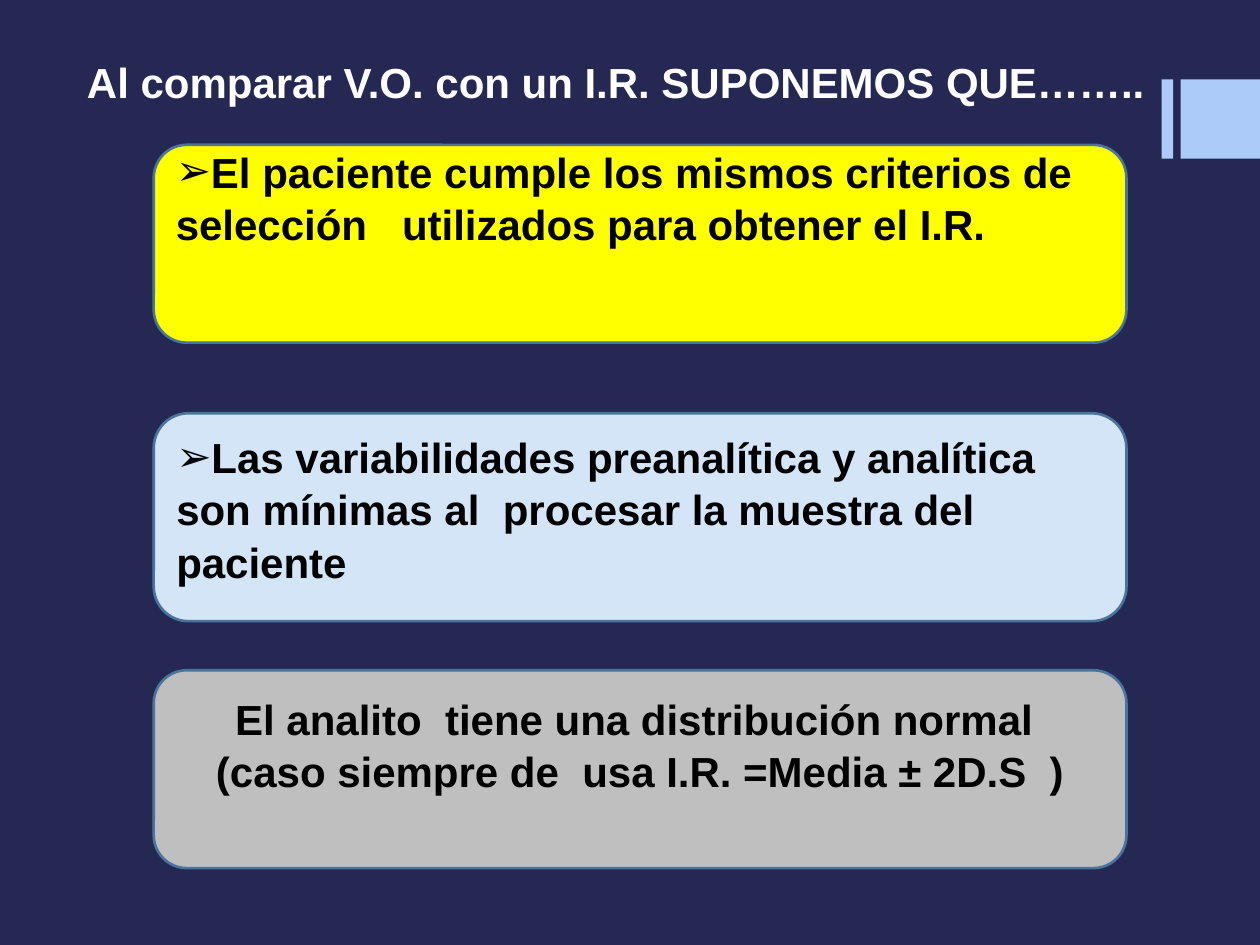
from dataclasses import dataclass

from lxml import etree
from pptx import Presentation
from pptx.dml.color import RGBColor
from pptx.enum.shapes import MSO_SHAPE
from pptx.enum.text import MSO_ANCHOR, PP_ALIGN
from pptx.oxml.ns import qn
from pptx.util import Inches, Pt

RECT = MSO_SHAPE.RECTANGLE
ROUND = MSO_SHAPE.ROUNDED_RECTANGLE
TOP = MSO_ANCHOR.TOP
MIDDLE = MSO_ANCHOR.MIDDLE
LEFT = PP_ALIGN.LEFT
CENTER = PP_ALIGN.CENTER


@dataclass(frozen=True)
class Theme:
    font: str = "Arial"
    size: int = 24
    edge: float = 1.5
    space: float = 1.04
    back: str = "242852"
    accent: str = "ACCBF9"
    line: str = "49749B"
    light: str = "FFFFFF"
    dark: str = "000000"
    yellow: str = "FFFF00"
    blue: str = "D4E5F7"
    gray: str = "BFBFBF"


class Board:
    def __init__(self, theme, slide):
        self.theme = theme
        self.slide = slide
        fill = slide.background.fill
        fill.solid()
        fill.fore_color.rgb = RGBColor.from_string(theme.back)

    def style(self, para, color, align):
        para.alignment = align
        font = para.font
        font.name = self.theme.font
        font.size = Pt(self.theme.size)
        font.bold = True
        font.color.rgb = RGBColor.from_string(color)

    def title(self, text, left, top, width, height):
        shape = self.slide.shapes.title
        shape.left, shape.top = Inches(left), Inches(top)
        shape.width, shape.height = Inches(width), Inches(height)
        frame = shape.text_frame
        frame.text = text
        frame.vertical_anchor = MIDDLE
        self.style(frame.paragraphs[0], self.theme.light, LEFT)

    def block(self, kind, color, left, top, width, height):
        shape = self.slide.shapes.add_shape(
            kind, Inches(left), Inches(top), Inches(width), Inches(height))
        shape.shadow.inherit = False
        shape.fill.solid()
        shape.fill.fore_color.rgb = RGBColor.from_string(color)
        shape.line.fill.background()
        return shape

    def bullet(self, para):
        props = para._p.get_or_add_pPr()
        props.set("marL", "0")
        props.set("indent", "0")
        etree.SubElement(props, qn("a:buFont"), typeface=self.theme.font)
        etree.SubElement(props, qn("a:buChar"), char="➢")

    def card(self, lines, color, top, height, anchor, foot, listed):
        shape = self.block(ROUND, color, 1.22, top, 7.72, height)
        shape.line.color.rgb = RGBColor.from_string(self.theme.line)
        shape.line.width = Pt(self.theme.edge)
        frame = shape.text_frame
        frame.word_wrap = True
        frame.vertical_anchor = anchor
        frame.margin_bottom = Inches(foot)
        frame.text = "\n".join(lines)
        for para in frame.paragraphs:
            self.style(para, self.theme.dark, LEFT if listed else CENTER)
            para.line_spacing = self.theme.space
            if listed:
                self.bullet(para)


def main():
    deck = Presentation()
    deck.slide_width, deck.slide_height = Inches(10), Inches(7.5)
    theme = Theme()
    board = Board(theme, deck.slides.add_slide(deck.slide_layouts[5]))

    for left, width in ((9.22, 0.09), (9.37, 0.63)):
        board.block(RECT, theme.accent, left, 0.63, width, 0.63)

    board.title("Al comparar V.O. con un I.R. SUPONEMOS QUE……..",
                0.59, 0.21, 8.66, 0.87)

    board.card(["El paciente cumple los mismos criterios de selección   "
                "utilizados para obtener el I.R."],
               theme.yellow, 1.15, 1.57, MIDDLE, 0.8, True)
    board.card(["Las variabilidades preanalítica y analítica  son mínimas al  "
                "procesar la muestra del paciente"],
               theme.blue, 3.28, 1.65, TOP, 0.05, True)
    board.card(["El analito  tiene una distribución normal ",
                "(caso siempre de  usa I.R. =Media ± 2D.S  )"],
               theme.gray, 5.32, 1.57, MIDDLE, 0.45, False)

    deck.save("out.pptx")


if __name__ == "__main__":
    main()
